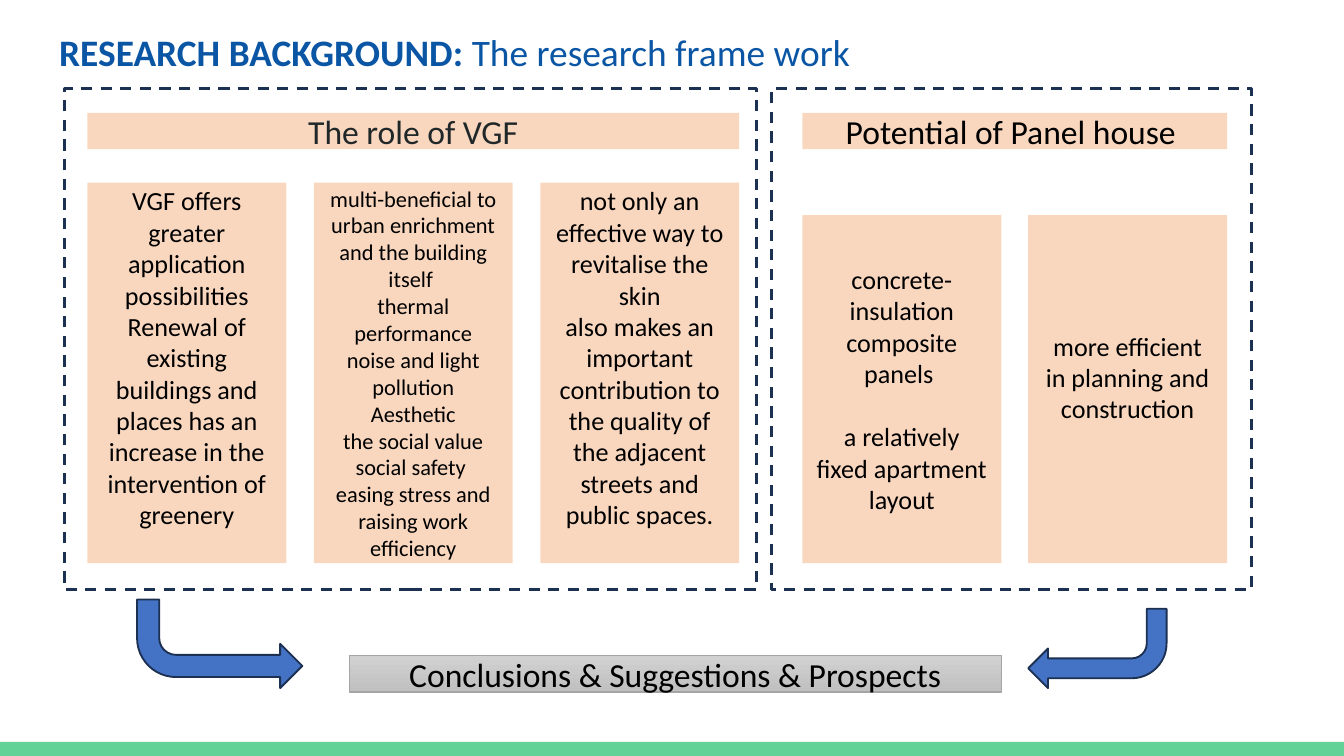
from dataclasses import dataclass

from lxml import etree
from pptx import Presentation
from pptx.dml.color import RGBColor
from pptx.enum.dml import MSO_LINE
from pptx.enum.shapes import MSO_SHAPE
from pptx.enum.text import MSO_ANCHOR, MSO_AUTO_SIZE, PP_ALIGN
from pptx.oxml.ns import qn
from pptx.util import Inches, Pt

RECTANGLE, PROCESS = MSO_SHAPE.RECTANGLE, MSO_SHAPE.FLOWCHART_PROCESS
BENT_ARROW = MSO_SHAPE.BENT_ARROW
DASH = MSO_LINE.DASH
TOP, MIDDLE = MSO_ANCHOR.TOP, MSO_ANCHOR.MIDDLE
LEFT, CENTER = PP_ALIGN.LEFT, PP_ALIGN.CENTER
FIXED = MSO_AUTO_SIZE.NONE


@dataclass(frozen=True)
class Theme:
    font: str = "Calibri"
    title: str = "0A55A4"
    ink: str = "000000"
    soft_ink: str = "202729"
    outline: str = "1C3052"
    peach: str = "F4B081"
    arrow: str = "4472C4"
    footer: str = "63D297"
    grey_top: str = "D1D1D1"
    grey_bottom: str = "C0C0C0"
    grey_edge: str = "A5A5A5"
    title_size: int = 20
    heading_size: int = 18
    body_size: int = 14
    small_size: int = 12


THEME = Theme()
COLUMN_WIDTH = 1.48
HEADING_HEIGHT = 0.27


def rgb(value):
    return RGBColor.from_string(value)


def add_box(slide, kind, box, fill=None, line=None, width=1, dash=None, alpha=None):
    shape = slide.shapes.add_shape(kind, *map(Inches, box))
    shape.shadow.inherit = False
    if fill:
        shape.fill.solid()
        shape.fill.fore_color.rgb = rgb(fill)
    else:
        shape.fill.background()
    if alpha:
        color = shape.fill._xPr.find(qn("a:solidFill"))[0]
        etree.SubElement(color, qn("a:alpha")).set("val", str(alpha * 1000))
    if line:
        shape.line.color.rgb = rgb(line)
        shape.line.width = Pt(width)
        if dash:
            shape.line.dash_style = dash
    else:
        shape.line.fill.background()
    return shape


def write(shape, paragraphs, size=THEME.body_size, color=THEME.ink, align=CENTER,
          anchor=MIDDLE, inset=0.05, bottom=None, gap=0):
    frame = shape.text_frame
    frame.word_wrap = True
    frame.auto_size = FIXED
    frame.vertical_anchor = anchor
    frame.margin_left = frame.margin_right = Inches(0.1)
    frame.margin_top = Inches(inset)
    frame.margin_bottom = Inches(inset if bottom is None else bottom)
    for index, runs in enumerate(paragraphs):
        paragraph = frame.paragraphs[0] if index == 0 else frame.add_paragraph()
        paragraph.alignment = align
        if index:
            paragraph.space_before = Pt(gap)
        for content, bold in [(runs, False)] if isinstance(runs, str) else runs:
            run = paragraph.add_run()
            run.text = content
            run.font.name = THEME.font
            run.font.size = Pt(size)
            run.font.bold = bold
            run.font.color.rgb = rgb(color)


def add_title(slide, box):
    title = slide.shapes.title
    title.left, title.top, title.width, title.height = map(Inches, box)
    write(title, [[("RESEARCH BACKGROUND: ", True), ("The research frame work", False)]],
          size=THEME.title_size, color=THEME.title, align=LEFT, anchor=TOP, inset=0.1)


def add_panel(slide, box, heading, columns, indent, inner_width, column_drop,
              heading_color=THEME.ink):
    left, top, _, height = box
    add_box(slide, RECTANGLE, box, line=THEME.outline, width=1.5, dash=DASH)
    inner_left = left + indent
    heading_box = (inner_left, top + 0.18, inner_width, HEADING_HEIGHT)
    write(add_box(slide, PROCESS, heading_box, fill=THEME.peach, alpha=50),
          [heading], size=THEME.heading_size, color=heading_color)
    step = (inner_width - COLUMN_WIDTH) / (len(columns) - 1)
    for index, (paragraphs, text_format) in enumerate(columns):
        column_box = (inner_left + index * step, top + column_drop,
                      COLUMN_WIDTH, height - column_drop - 0.2)
        column = add_box(slide, PROCESS, column_box, fill=THEME.peach, alpha=50)
        write(column, paragraphs, **text_format)


def add_conclusion(slide, box):
    conclusion = add_box(slide, PROCESS, box, line=THEME.grey_edge, width=0.75)
    conclusion.fill.gradient()
    conclusion.fill.gradient_angle = 270
    for stop, color in zip(conclusion.fill.gradient_stops,
                           (THEME.grey_top, THEME.grey_bottom)):
        stop.color.rgb = rgb(color)
    write(conclusion, ["Conclusions & Suggestions & Prospects"], size=THEME.heading_size)


def add_bent_arrow(slide, box, mirrored=False):
    arrow = add_box(slide, BENT_ARROW, box, fill=THEME.arrow, line=THEME.outline)
    for index, value in enumerate((0.25, 0.25, 0.25, 0.44)):
        arrow.adjustments[index] = value
    arrow.rotation = 180
    if mirrored:
        arrow._element.spPr.find(qn("a:xfrm")).set("flipH", "1")


VGF_COLUMNS = [
    (["VGF offers greater application possibilities",
      "Renewal of existing buildings and places has an increase in the "
      "intervention of greenery"], {"bottom": 0.28}),
    (["multi-beneficial to urban enrichment and the building itself ",
      "thermal performance", "noise and light pollution", "Aesthetic",
      "the social value", "social safety ",
      "easing stress and raising work efficiency"], {"size": THEME.small_size}),
    (["not only an effective way to revitalise the skin",
      "also makes an important contribution to the quality of the adjacent "
      "streets and public spaces."], {"bottom": 0.28}),
]
HOUSE_COLUMNS = [
    (["concrete-insulation composite panels ",
      "a relatively fixed apartment layout"], {"gap": 17}),
    (["more efficient in planning and construction"], {"bottom": 0.23}),
]


def main():
    deck = Presentation()
    deck.slide_width = Inches(10)
    deck.slide_height = deck.slide_width * 9 // 16
    slide = deck.slides.add_slide(deck.slide_layouts[5])
    add_box(slide, RECTANGLE, (0, 5.52, 10, 0.11), fill=THEME.footer)
    add_title(slide, (0.34, 0.12, 7.95, 0.88))
    add_panel(slide, (0.48, 0.66, 5.15, 3.73), "The role of VGF", VGF_COLUMNS,
              indent=0.17, inner_width=4.85, column_drop=0.7,
              heading_color=THEME.soft_ink)
    add_panel(slide, (5.74, 0.66, 3.57, 3.73), "Potential of Panel house ", HOUSE_COLUMNS,
              indent=0.23, inner_width=3.16, column_drop=0.94)
    add_conclusion(slide, (2.6, 4.88, 4.85, HEADING_HEIGHT))
    add_bent_arrow(slide, (7.65, 4.53, 1.03, 0.59))
    add_bent_arrow(slide, (1.02, 4.46, 1.23, 0.66), mirrored=True)
    deck.save("out.pptx")


if __name__ == "__main__":
    main()
